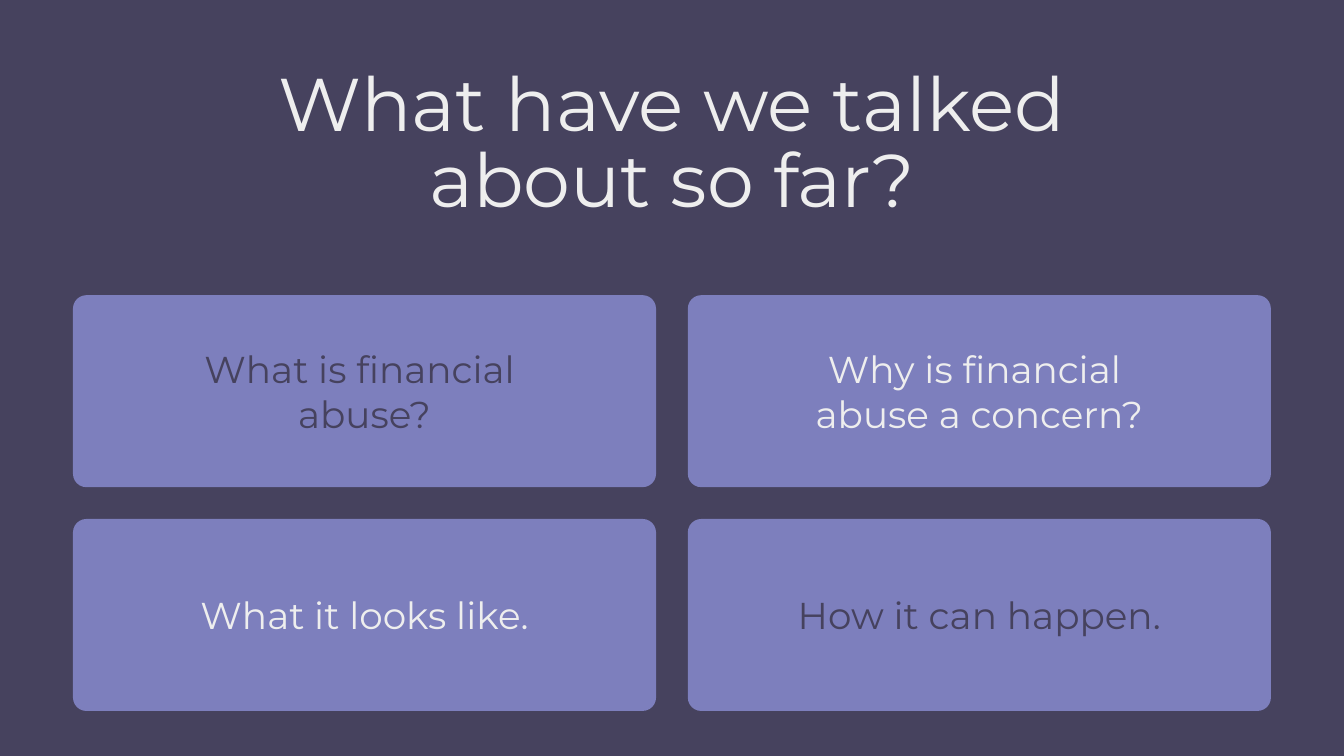
import pptx
import pptx.dml.color
import pptx.enum.shapes
import pptx.enum.text
import pptx.util

Cm = pptx.util.Cm
Color = pptx.dml.color.RGBColor
Anchor = pptx.enum.text.MSO_ANCHOR

DARK = Color(0x46, 0x42, 0x5E)
LIGHT = Color(0xEE, 0xEE, 0xEE)
VIOLET = Color(0x7D, 0x7F, 0xBD)
FONT = "Montserrat"

LEFT, TOP = 1.38, 5.58
WIDTH, HEIGHT, GAP = 11.02, 3.63, 0.6

TOPICS = [
    [("What is financial \nabuse?", DARK),
     ("Why is financial \nabuse a concern?", LIGHT)],
    [("What it looks like.", LIGHT),
     ("How it can happen.", DARK)],
]


def write(shape, text, size, color, anchor):
    """Fill a shape with one centred paragraph and return it."""
    frame = shape.text_frame
    frame.word_wrap = True
    frame.vertical_anchor = anchor
    frame.margin_left = frame.margin_right = Cm(0.25)
    frame.margin_top = frame.margin_bottom = Cm(0.25)
    para = frame.paragraphs[0]
    para.text = text
    para.alignment = pptx.enum.text.PP_ALIGN.CENTER
    for run in para.runs:
        run.font.name = FONT
        run.font.size = pptx.util.Pt(size)
        run.font.color.rgb = color
    return para


def add_title(slide, text):
    box = slide.shapes.add_textbox(Cm(4.62), Cm(1.09), Cm(16.16), Cm(3.89))
    para = write(box, text, 40, LIGHT, Anchor.TOP)
    para.line_spacing = 0.85


def add_card(slide, row, col, text, color):
    card = slide.shapes.add_shape(
        pptx.enum.shapes.MSO_SHAPE.ROUNDED_RECTANGLE,
        Cm(LEFT + col * (WIDTH + GAP)), Cm(TOP + row * (HEIGHT + GAP)),
        Cm(WIDTH), Cm(HEIGHT))
    card.adjustments[0] = 0.07
    card.shadow.inherit = False
    card.fill.solid()
    card.fill.fore_color.rgb = VIOLET
    card.line.fill.background()
    write(card, text, 20, color, Anchor.MIDDLE)


def main():
    deck = pptx.Presentation()
    deck.slide_width, deck.slide_height = Cm(25.4), Cm(14.29)
    slide = deck.slides.add_slide(deck.slide_layouts[6])
    slide.background.fill.solid()
    slide.background.fill.fore_color.rgb = DARK

    add_title(slide, "What have we talked about so far?")
    for row, topics in enumerate(TOPICS):
        for col, (text, color) in enumerate(topics):
            add_card(slide, row, col, text, color)
    deck.save("out.pptx")


if __name__ == "__main__":
    main()
